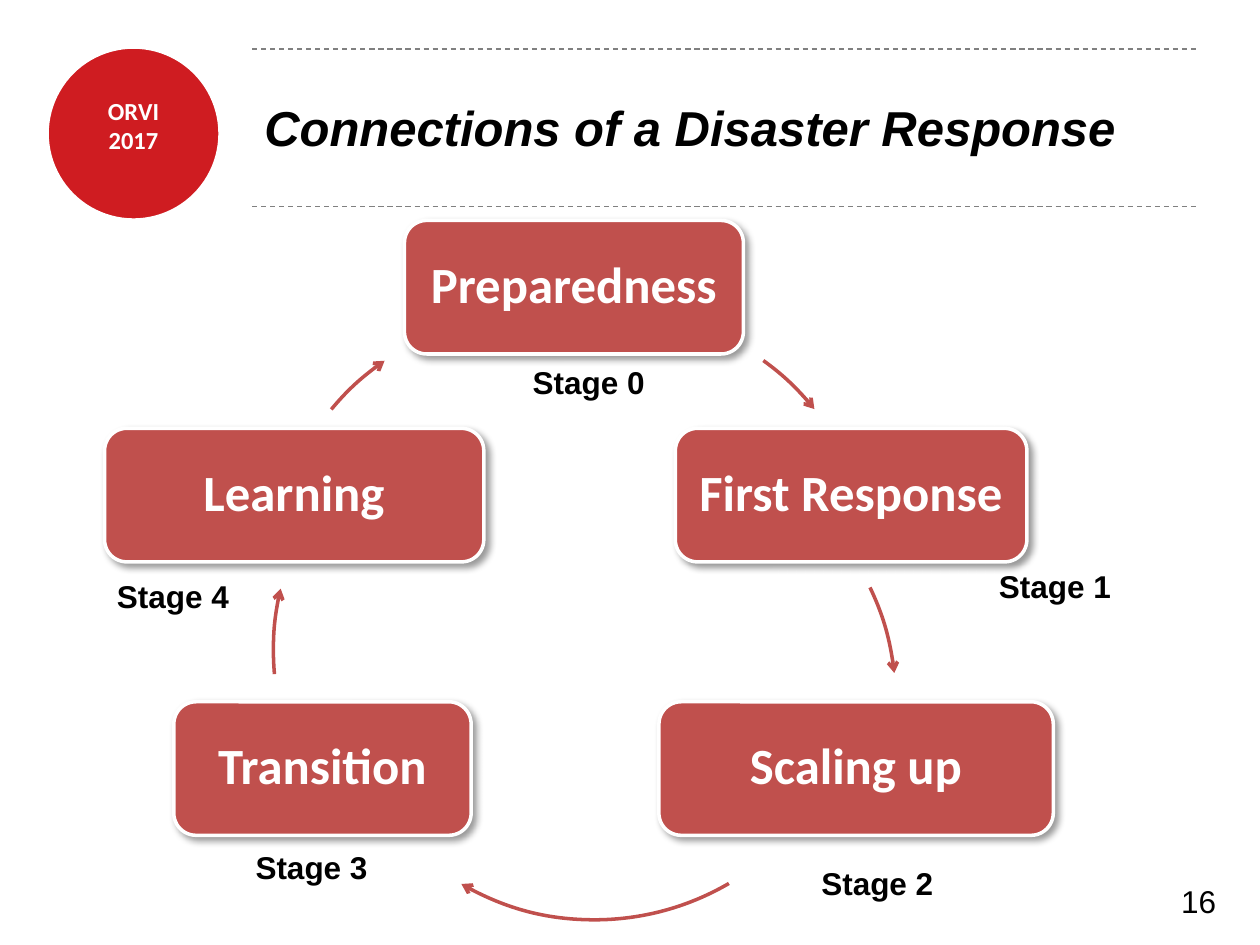
"""Build the disaster response cycle slide."""
import math

import lxml.etree
import pptx
import pptx.dml.color
import pptx.enum.dml
import pptx.enum.shapes
import pptx.enum.text
import pptx.oxml
import pptx.oxml.ns
import pptx.util

Inches, Pt = pptx.util.Inches, pptx.util.Pt
RGBColor = pptx.dml.color.RGBColor
SHAPE = pptx.enum.shapes.MSO_SHAPE
ALIGN = pptx.enum.text.PP_ALIGN
ANCHOR = pptx.enum.text.MSO_ANCHOR
qn = pptx.oxml.ns.qn

RED = RGBColor(0xCF, 0x1C, 0x21)
BRICK = RGBColor(0xC0, 0x50, 0x4D)
GREY = RGBColor(0x80, 0x80, 0x80)
WHITE = RGBColor(0xFF, 0xFF, 0xFF)
BLACK = RGBColor(0, 0, 0)

STAGE_HEIGHT = 1.06
ARC_SIZE = 4.22


class CycleSlide:
    """Style and drawing methods for the current slide."""

    def __init__(self, slide):
        self.slide = slide

    def set_lines(self, frame, lines, size, font="Arial", color=BLACK, bold=True,
                  italic=False, align=ALIGN.LEFT, anchor=ANCHOR.TOP, inset=None,
                  wrap=True, spacing=None):
        frame.word_wrap = wrap
        frame.vertical_anchor = anchor
        if inset is not None:
            frame.margin_left = frame.margin_right = Inches(inset)
            frame.margin_top = frame.margin_bottom = Inches(inset)
        for index, line in enumerate(lines):
            paragraph = frame.add_paragraph() if index else frame.paragraphs[0]
            paragraph.alignment = align
            if spacing:
                paragraph.line_spacing = spacing
            run = paragraph.add_run()
            run.text = line
            run.font.name, run.font.size = font, Pt(size)
            run.font.bold, run.font.italic = bold, italic
            run.font.color.rgb = color

    def text(self, box, lines, size, **style):
        label = self.slide.shapes.add_textbox(*map(Inches, box))
        self.set_lines(label.text_frame, lines, size, **style)

    def solid(self, kind, box, fill, line_width):
        shape = self.slide.shapes.add_shape(kind, *map(Inches, box))
        shape.shadow.inherit = False
        shape.fill.solid()
        shape.fill.fore_color.rgb = fill
        shape.line.color.rgb = WHITE
        shape.line.width = Pt(line_width)
        return shape

    def stage(self, left, top, width, name):
        card = self.solid(SHAPE.ROUNDED_RECTANGLE, (left, top, width, STAGE_HEIGHT), BRICK, 2)
        effects = card.element.spPr.find(qn("a:effectLst"))
        shadow = lxml.etree.SubElement(
            effects, qn("a:outerShdw"), blurRad=str(Pt(4)), dist=str(Pt(3)),
            dir=str(45 * 60000), rotWithShape="0")
        tint = lxml.etree.SubElement(shadow, qn("a:srgbClr"), val="000000")
        lxml.etree.SubElement(tint, qn("a:alpha"), val="40000")
        self.set_lines(card.text_frame, [name], 29, font="Calibri", color=WHITE,
                       align=ALIGN.CENTER, anchor=ANCHOR.MIDDLE, inset=0.12, spacing=0.9)

    def arc_arrow(self, left, top, start, end):
        arc = self.slide.shapes.add_shape(
            SHAPE.ARC, *map(Inches, (left, top, ARC_SIZE, ARC_SIZE)))
        arc.shadow.inherit = False
        arc.fill.background()
        arc.line.color.rgb = BRICK
        arc.line.width = Pt(2)
        radius = ARC_SIZE / 2
        for index, (x, y) in enumerate((start, end)):
            angle = math.degrees(math.atan2(y - top - radius, x - left - radius)) % 360
            arc.adjustments[index] = angle * 0.6
        outline = arc.element.spPr.find(qn("a:ln"))
        lxml.etree.SubElement(outline, qn("a:tailEnd"), type="arrow")

    def rule(self, top):
        line = self.slide.shapes.add_connector(
            pptx.enum.shapes.MSO_CONNECTOR.STRAIGHT,
            Inches(2), Inches(top), Inches(9.5), Inches(top))
        line.line.color.rgb = GREY
        line.line.width = Pt(0.75)
        line.line.dash_style = pptx.enum.dml.MSO_LINE.DASH
        lxml.etree.SubElement(line.element.spPr, qn("a:effectLst"))


def main():
    deck = pptx.Presentation()
    deck.slide_width, deck.slide_height = Inches(10), Inches(7.5)
    page = CycleSlide(deck.slides.add_slide(deck.slide_layouts[6]))

    page.solid(SHAPE.OVAL, (0.37, 0.37, 1.38, 1.38), RED, 2.5)
    page.text((0.43, 0.76, 1.26, 0.47), ["ORVI", "2017"], 14, font="Calibri",
              color=WHITE, align=ALIGN.CENTER, inset=0)
    for top in (0.39, 1.64):
        page.rule(top)
    page.text((2, 0.38, 7.5, 1.25), ["Connections of a Disaster Response"], 28,
              italic=True, anchor=ANCHOR.MIDDLE)

    stages = [
        (3.21, 1.75, 2.69, "Preparedness"),
        (5.36, 3.4, 2.79, "First Response"),
        (5.23, 5.57, 3.13, "Scaling up"),
        (1.38, 5.57, 2.36, "Transition"),
        (0.83, 3.4, 3.01, "Learning"),
    ]
    arrows = [
        (2.71, 2.46, (6.06, 2.86), (6.46, 3.25)),
        (2.89, 3.46, (6.91, 4.66), (7.11, 5.34)),
        (2.61, 3.08, (5.79, 7.02), (3.66, 7.02)),
        (2.17, 3.05, (2.18, 5.35), (2.22, 4.67)),
        (2.14, 2.49, (2.63, 3.25), (3.05, 2.86)),
    ]
    for stage, arrow in zip(stages, arrows):
        page.stage(*stage)
        page.arc_arrow(*arrow)

    label_corners = [(4.13, 2.83), (7.83, 4.45), (6.42, 6.81), (1.93, 6.68), (0.83, 4.53)]
    for number, corner in enumerate(label_corners):
        page.text((*corner, 1.1, 0.4), [f"Stage {number}"], 18, wrap=False)
    page.text((7.42, 6.95, 2.33, 0.4), ["16"], 18, bold=False, align=ALIGN.RIGHT)

    deck.save("out.pptx")


if __name__ == "__main__":
    main()
